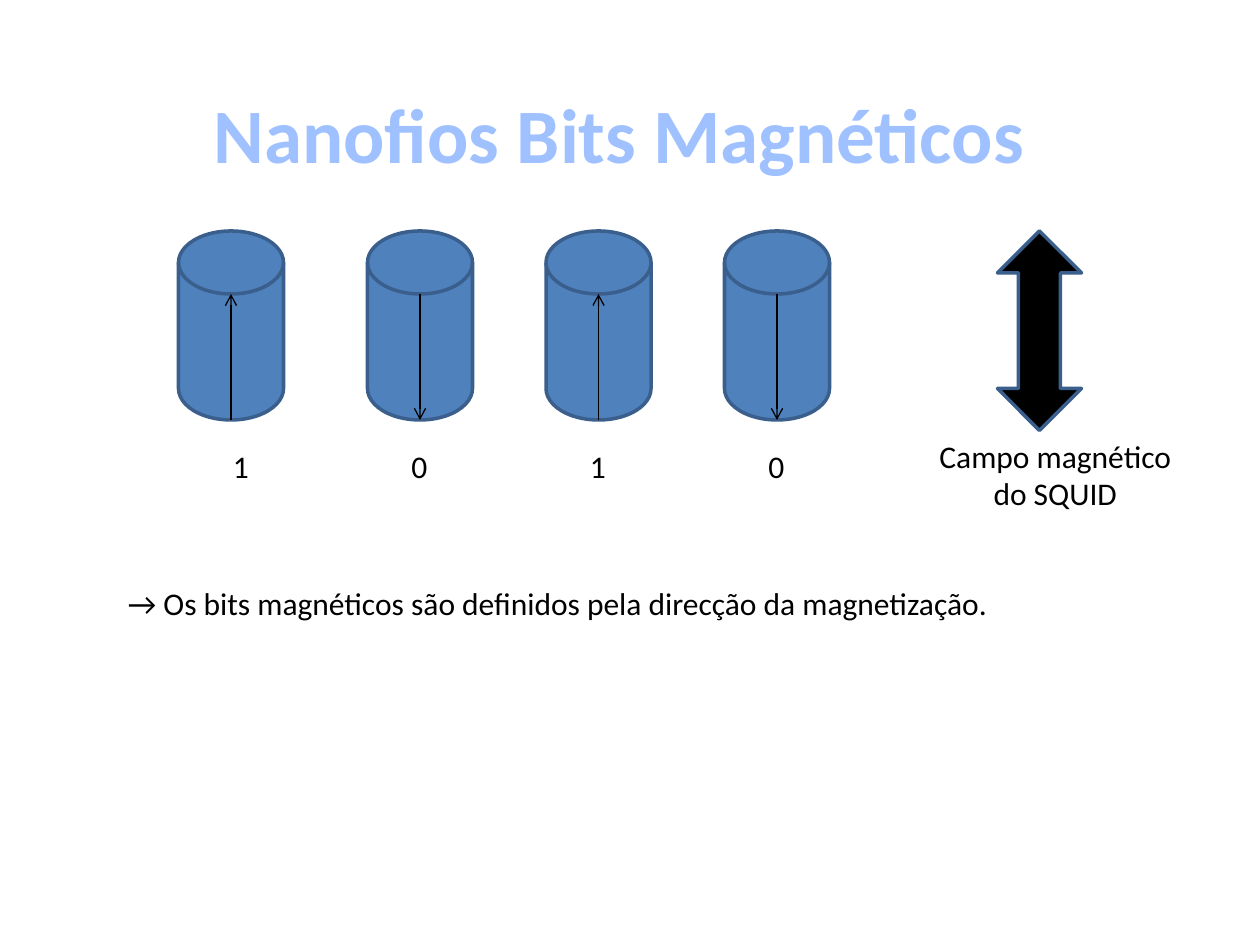
from lxml.etree import SubElement as Sub
from pptx import Presentation
from pptx.dml.color import RGBColor
from pptx.enum.shapes import MSO_CONNECTOR as Link, MSO_SHAPE as Shape
from pptx.enum.text import MSO_ANCHOR as Anchor, PP_ALIGN as Align
from pptx.oxml.ns import qn
from pptx.util import Emu, Pt

SCALE = 7620
FONT = "Calibri"
BLACK = "000000"
TOP, WIDE, HIGH = 220, 100, 180


def px(n):
    return Emu(n * SCALE)


def box(*nums):
    return [px(n) for n in nums]


def color(code):
    return RGBColor.from_string(code)


def write(para, text, size, code, bold=False, align=Align.LEFT):
    para.alignment = align
    run = para.add_run()
    run.text = text
    font = run.font
    font.name, font.size, font.bold = FONT, Pt(size), bold
    font.color.rgb = color(code)


def add_title(slide, text):
    title = slide.shapes.title
    title.left, title.top, title.width, title.height = box(80, 30, 1020, 193)
    frame = title.text_frame
    frame.vertical_anchor = Anchor.MIDDLE
    write(frame.paragraphs[0], text, 44, "A0C1FF", True, Align.CENTER)


def add_text(slide, text, place, align=Align.LEFT, wrap=True):
    frame = slide.shapes.add_textbox(*box(*place)).text_frame
    frame.word_wrap = wrap
    write(frame.paragraphs[0], text, 18, BLACK, align=align)


def add_solid(slide, kind, place, fill):
    shape = slide.shapes.add_shape(kind, *box(*place))
    shape.shadow.inherit = False
    shape.fill.solid()
    shape.fill.fore_color.rgb = color(fill)
    shape.line.color.rgb = color("3A5F8C")
    shape.line.width = Pt(2)


def add_arrow(slide, x, start, end):
    arrow = slide.shapes.add_connector(Link.STRAIGHT, *box(x, start, x, end))
    arrow.line.color.rgb = color(BLACK)
    arrow.line.width = Pt(0.75)
    Sub(arrow.line._get_or_add_ln(), qn("a:tailEnd"), type="arrow")
    Sub(arrow._element.spPr, qn("a:effectLst"))


def add_bit(slide, left, bit, label):
    add_solid(slide, Shape.FLOWCHART_MAGNETIC_DISK,
              (left, TOP, WIDE, HIGH), "4F81BD")
    low, high = TOP + HIGH, TOP + HIGH // 3
    start, end = (low, high) if bit == "1" else (high, low)
    add_arrow(slide, left + WIDE // 2, start, end)
    add_text(slide, bit, (label, 420, 50, 50))


def main():
    deck = Presentation()
    deck.slide_width, deck.slide_height = box(1200, 900)
    slide = deck.slides.add_slide(deck.slide_layouts[5])
    add_title(slide, "Nanofios Bits Magnéticos")
    bits = [(170, "1", 210), (350, "0", 380), (520, "1", 550), (690, "0", 720)]
    for left, bit, label in bits:
        add_bit(slide, left, bit, label)
    add_solid(slide, Shape.UP_DOWN_ARROW, (950, TOP, 80, 190), BLACK)
    add_text(slide, "→ Os bits magnéticos são definidos pela direcção da "
             "magnetização.", (110, 550, 856, 48), wrap=False)
    add_text(slide, "Campo magnético do SQUID", (870, 410, 270, 85),
             Align.CENTER)
    deck.save("out.pptx")


if __name__ == "__main__":
    main()
